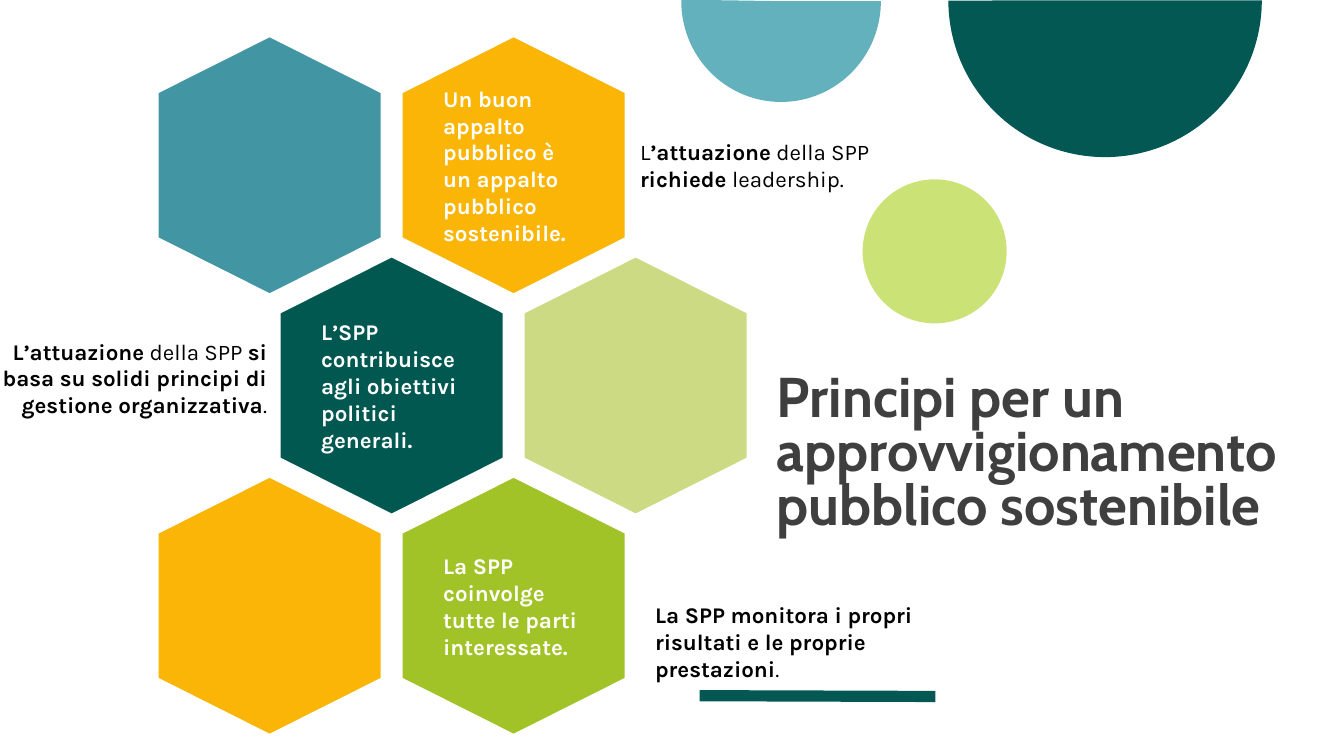
from pptx import Presentation
from pptx.dml.color import RGBColor
from pptx.enum.shapes import MSO_CONNECTOR, MSO_SHAPE
from pptx.enum.text import MSO_ANCHOR as Anchor, PP_ALIGN as Align
from pptx.oxml.ns import qn
from pptx.util import Cm, Pt
from lxml.etree import SubElement

WHITE = RGBColor(0xFF, 0xFF, 0xFF)
BLACK = RGBColor(0, 0, 0)
GREY = RGBColor(0x3F, 0x3F, 0x3F)
PINE = RGBColor(0x03, 0x58, 0x54)
DARK_GREEN = RGBColor(0x00, 0x58, 0x51)
TEAL = RGBColor(0x42, 0x95, 0xA2)
SKY = RGBColor(0x64, 0xB1, 0xBE)
LIME = RGBColor(0xCB, 0xE2, 0x77)
PALE_GREEN = RGBColor(0xCB, 0xDA, 0x83)
GREEN = RGBColor(0xA2, 0xC3, 0x28)
AMBER = RGBColor(0xFA, 0xB5, 0x06)

# Honeycomb grid, in cm
HEX_W, HEX_H = 6.53, 5.69
HEX_LEFT, HEX_TOP = 3.53, 1.32
COLUMN_STEP, ROW_STEP = 6.15, 5.55


class PrinciplesSlide:
    heading_font, body_font = "Cabin", "Karla"
    inset = Cm(0.18)

    def __init__(self, slide):
        self.shapes = slide.shapes

    def figure(self, kind, left, top, width, height, fill, adjustments=()):
        figure = self.shapes.add_shape(kind, Cm(left), Cm(top), Cm(width), Cm(height))
        figure.shadow.inherit = False
        figure.fill.solid()
        figure.fill.fore_color.rgb = fill
        figure.line.fill.background()
        for index, value in enumerate(adjustments):
            figure.adjustments[index] = value
        return figure

    def bar(self, x1, y1, x2, y2, color, width):
        bar = self.shapes.add_connector(
            MSO_CONNECTOR.STRAIGHT, Cm(x1), Cm(y1), Cm(x2), Cm(y2))
        bar.line.color.rgb = color
        bar.line.width = Pt(width)
        SubElement(bar._element.spPr, qn("a:effectLst"))

    def text_box(self, left, top, width, height, inset, anchor):
        frame = self.shapes.add_textbox(
            Cm(left), Cm(top), Cm(width), Cm(height)).text_frame
        frame.word_wrap = True
        frame.vertical_anchor = anchor
        frame.margin_left = frame.margin_right = inset
        frame.margin_top = frame.margin_bottom = inset
        return frame.paragraphs[0]

    def title(self, words, left, top, width, height):
        title = self.text_box(left, top, width, height, 0, Anchor.BOTTOM)
        title.text = words
        title.line_spacing = 0.8
        title.font.name, title.font.size = self.heading_font, Pt(40)
        title.font.bold = True
        title.font.color.rgb = GREY

    def principle(self, pieces, left, top, width, height, color=BLACK, align=Align.LEFT):
        """Write (words, bold) pieces as one paragraph."""
        principle = self.text_box(left, top, width, height, self.inset, Anchor.MIDDLE)
        principle.alignment = align
        principle.font.name, principle.font.size = self.body_font, Pt(16)
        principle.font.color.rgb = color
        for words, bold in pieces:
            run = principle.add_run()
            run.text = words
            run.font.bold = bold

    def hexagon(self, row, column, fill, words=None):
        left = HEX_LEFT + (column + row % 2 / 2) * COLUMN_STEP
        top = HEX_TOP + row * ROW_STEP
        cell = self.figure(MSO_SHAPE.HEXAGON, left, top, HEX_W, HEX_H, fill, (0.25, 1.15))
        cell.rotation = 90
        cell.line.color.rgb = WHITE
        cell.line.width = Pt(2)
        if words:
            self.principle([(words, True)], left + 1.31, top + 0.6, 3.91, 4.5, WHITE)


def main():
    deck = Presentation()
    deck.slide_width, deck.slide_height = Cm(33.87), Cm(19.05)
    page = PrinciplesSlide(deck.slides.add_slide(deck.slide_layouts[6]))

    # Decoration
    page.bar(17.63, 17.53, 23.57, 17.55, PINE, 8)
    page.figure(MSO_SHAPE.PIE, 23.9, -3.94, 7.9, 7.9, PINE, (0, 107.96))
    page.figure(MSO_SHAPE.PIE, 17.17, -2.51, 5.03, 5.08, SKY, (0, 108.52))
    page.figure(MSO_SHAPE.OVAL, 21.74, 4.52, 3.63, 3.63, LIME)

    page.title("Principi per un approvvigionamento pubblico sostenibile",
               19.58, 6.78, 14.55, 6.73)

    # Honeycomb: row, column, fill, words
    for cell in (
        (0, 0, TEAL),
        (0, 1, AMBER, "Un buon appalto pubblico è un appalto pubblico sostenibile."),
        (1, 0, DARK_GREEN, "L’SPP contribuisce agli obiettivi politici generali."),
        (1, 1, PALE_GREEN),
        (2, 0, AMBER),
        (2, 1, GREEN, "La SPP coinvolge tutte le parti interessate."),
    ):
        page.hexagon(*cell)

    # Principles beside the honeycomb
    page.principle(
        [("L", False), ("’attuazione", True), (" della SPP ", False),
         ("richiede ", True), ("leadership.", False)],
        15.95, 2.21, 7.29, 3.91)
    page.principle(
        [("L’attuazione", True), (" della SPP ", False),
         ("si basa su solidi principi di gestione organizzativa", True), (".", False)],
        -0.15, 7.57, 7.06, 3.91, align=Align.RIGHT)
    page.principle(
        [("La SPP monitora i propri risultati e le proprie prestazioni", True),
         (".", False)],
        16.33, 14.22, 7.29, 3.91)

    deck.save("out.pptx")


if __name__ == "__main__":
    main()
